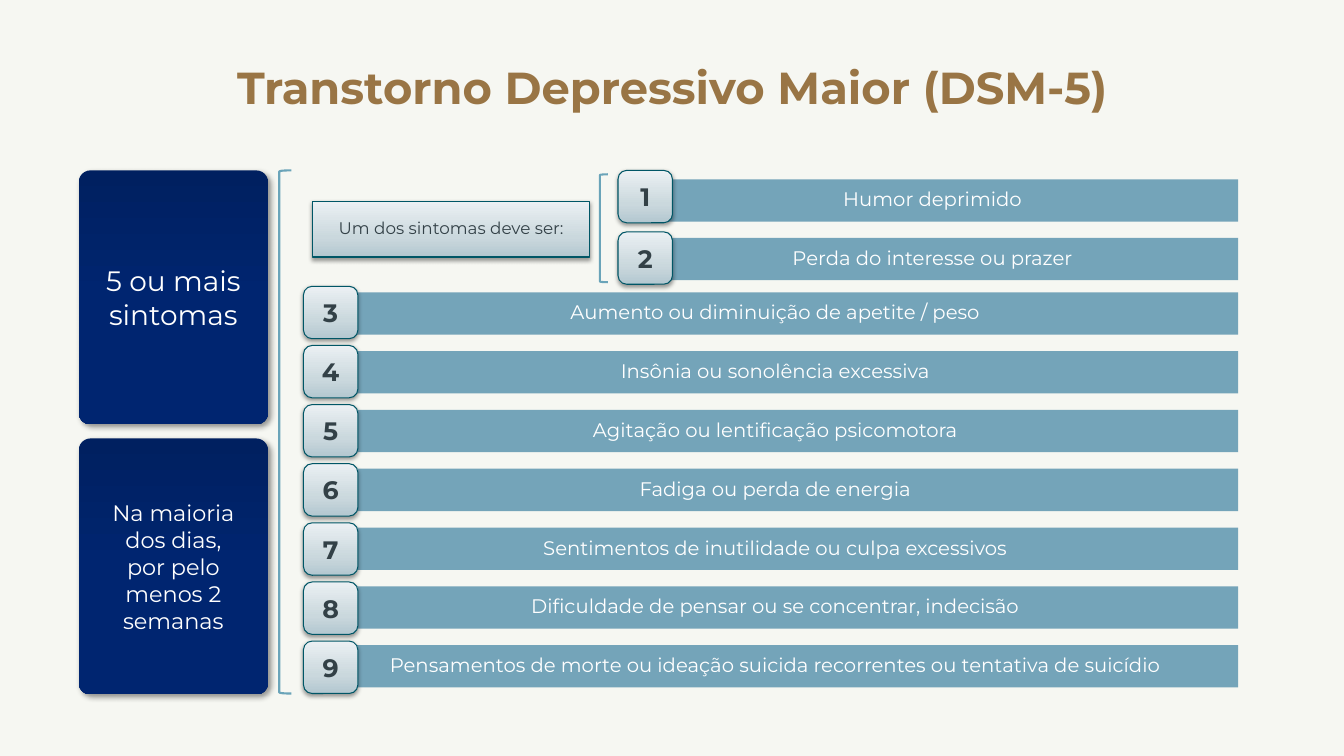
from copy import deepcopy
from dataclasses import dataclass

from lxml.etree import SubElement
from pptx import Presentation
from pptx.dml.color import RGBColor
from pptx.enum.shapes import MSO_SHAPE
from pptx.enum.text import MSO_ANCHOR, PP_ALIGN
from pptx.oxml.ns import qn
from pptx.util import Inches, Pt


@dataclass(frozen=True)
class Theme:
    font: str = "Montserrat"
    paper: str = "F6F7F2"
    title: str = "997545"
    white: str = "FFFFFF"
    dark: str = "334147"
    bar: str = "74A4B9"
    bracket: str = "6AA4B9"
    edge: str = "005666"
    silver: tuple = ((0, "B3C7D0"), (0.35, "CAD8DD"), (1, "EBF0F3"))
    navy: tuple = ((0, "002060"), (0.5, "002570"), (1, "002570"))
    # Shadows: opacity %, blur pt, distance pt, direction in degrees
    soft_shadow: tuple = (38, 3.1, 1.6, 90)
    deep_shadow: tuple = (40, 4, 3, 45)
    title_size: int = 32
    panel_size: int = 20
    period_size: int = 16
    number_size: int = 18
    symptom_size: int = 14
    note_size: int = 12


theme = Theme()


def add_box(kind, area, fill=None, angle=0, edge=None, weight=0.75, shadow=None):
    """Add a shape; fill is one colour, a tuple of gradient stops or None."""
    box = page.shapes.add_shape(kind, *(Inches(length) for length in area))
    if fill is None:
        box.fill.background()
    elif isinstance(fill, str):
        box.fill.solid()
        box.fill.fore_color.rgb = RGBColor.from_string(fill)
    else:
        box.fill.gradient()
        box.fill.gradient_angle = angle
        stop_list = box._element.spPr.find(qn("a:gradFill")).find(qn("a:gsLst"))
        stop_list.append(deepcopy(stop_list[-1]))
        for stop, (position, color) in zip(box.fill.gradient_stops, fill):
            stop.position = position
            stop.color.rgb = RGBColor.from_string(color)
    if edge:
        box.line.color.rgb = RGBColor.from_string(edge)
        box.line.width = Pt(weight)
    else:
        box.line.fill.background()
    box.shadow.inherit = False
    if shadow:
        opacity, blur, distance, direction = shadow
        effects = box._element.spPr.find(qn("a:effectLst"))
        outer = SubElement(effects, qn("a:outerShdw"), blurRad=str(Pt(blur)),
                           dist=str(Pt(distance)), dir=str(direction * 60000),
                           algn="ctr", rotWithShape="0")
        color = SubElement(outer, qn("a:srgbClr"), val="000000")
        SubElement(color, qn("a:alpha"), val=str(opacity * 1000))
    return box


def write(box, text, size, color, bold=False, spacing=1.0, margin=None):
    """Write centred text, one paragraph per line."""
    frame = box.text_frame
    frame.word_wrap = True
    frame.vertical_anchor = MSO_ANCHOR.MIDDLE
    if margin is not None:
        frame.margin_left = frame.margin_right = Inches(margin)
        frame.margin_top = frame.margin_bottom = Inches(margin)
    frame.text = text
    for para in frame.paragraphs:
        para.alignment = PP_ALIGN.CENTER
        para.line_spacing = spacing
        para.font.name = theme.font
        para.font.size = Pt(size)
        para.font.bold = bold
        para.font.color.rgb = RGBColor.from_string(color)


deck = Presentation()
deck.slide_width, deck.slide_height = Inches(13.33), Inches(7.5)
page = deck.slides.add_slide(deck.slide_layouts[5])
page.background.fill.solid()
page.background.fill.fore_color.rgb = RGBColor.from_string(theme.paper)

# Grid: columns from left to right, and the shared top and bottom
panel_left, panel_width = 0.78, 1.88
bracket_left, list_left, pair_left = 2.77, 3.01, 6.13
bar_indent, bar_right, bar_height = 0.09, 12.28, 0.42
badge_width, badge_height = 0.54, 0.52
top, bottom = 1.69, 6.88

# Title
title = page.shapes.title
title.left, title.top = Inches(1.45), Inches(0.47)
title.width, title.height = Inches(10.44), Inches(0.85)
write(title, "Transtorno Depressivo Maior (DSM-5)", theme.title_size, theme.title,
      bold=True, spacing=0.9, margin=0)

# Criteria panels on the left
panels = [
    (top, 2.52, "5 ou mais sintomas", theme.panel_size),
    (4.35, 2.54, "Na maioria dos dias,\npor pelo menos 2 semanas", theme.period_size),
]
for panel_top, height, text, size in panels:
    panel = add_box(MSO_SHAPE.ROUNDED_RECTANGLE,
                    (panel_left, panel_top, panel_width, height),
                    theme.navy, angle=270, shadow=theme.deep_shadow)
    panel.adjustments[0] = 0.063
    write(panel, text, size, theme.white)

# Symptom groups: left edge, first and last bar top, first and last badge top
groups = [
    (pair_left, (1.78, 2.36), (1.69, 2.30),
     ["Humor deprimido", "Perda do interesse ou prazer"]),
    (list_left, (2.90, 6.40), (2.84, 6.36),
     ["Aumento ou diminuição de apetite / peso",
      "Insônia ou sonolência excessiva",
      "Agitação ou lentificação psicomotora",
      "Fadiga ou perda de energia",
      "Sentimentos de inutilidade ou culpa excessivos",
      "Dificuldade de pensar ou se concentrar, indecisão",
      "Pensamentos de morte ou ideação suicida recorrentes ou tentativa de suicídio"]),
]
number = 0
for left, bar_tops, badge_tops, symptoms in groups:
    for row, symptom in enumerate(symptoms):
        number += 1
        share = row / (len(symptoms) - 1)
        bar_top, badge_top = (first + share * (last - first)
                              for first, last in (bar_tops, badge_tops))
        bar_left = left + bar_indent
        bar = add_box(MSO_SHAPE.RECTANGLE,
                      (bar_left, bar_top, bar_right - bar_left, bar_height), theme.bar)
        write(bar, symptom, theme.symptom_size, theme.white, spacing=0.9, margin=0.01)
        badge = add_box(MSO_SHAPE.ROUNDED_RECTANGLE,
                        (left, badge_top, badge_width, badge_height),
                        theme.silver, angle=90, edge=theme.edge,
                        shadow=theme.soft_shadow)
        write(badge, str(number), theme.number_size, theme.dark, bold=True)

# Note beside the first two symptoms
note = add_box(MSO_SHAPE.RECTANGLE, (list_left + bar_indent, 2, 2.75, 0.55),
               theme.silver, angle=90, edge=theme.edge, shadow=theme.soft_shadow)
write(note, "Um dos sintomas deve ser:", theme.note_size, theme.dark,
      spacing=0.9, margin=0.01)

# Brackets around the pair and the whole list
for area in [(5.95, 1.73, 0.08, 1.07), (bracket_left, top, 0.12, bottom - top)]:
    add_box(MSO_SHAPE.LEFT_BRACKET, area, edge=theme.bracket, weight=1.5)

deck.save("out.pptx")
